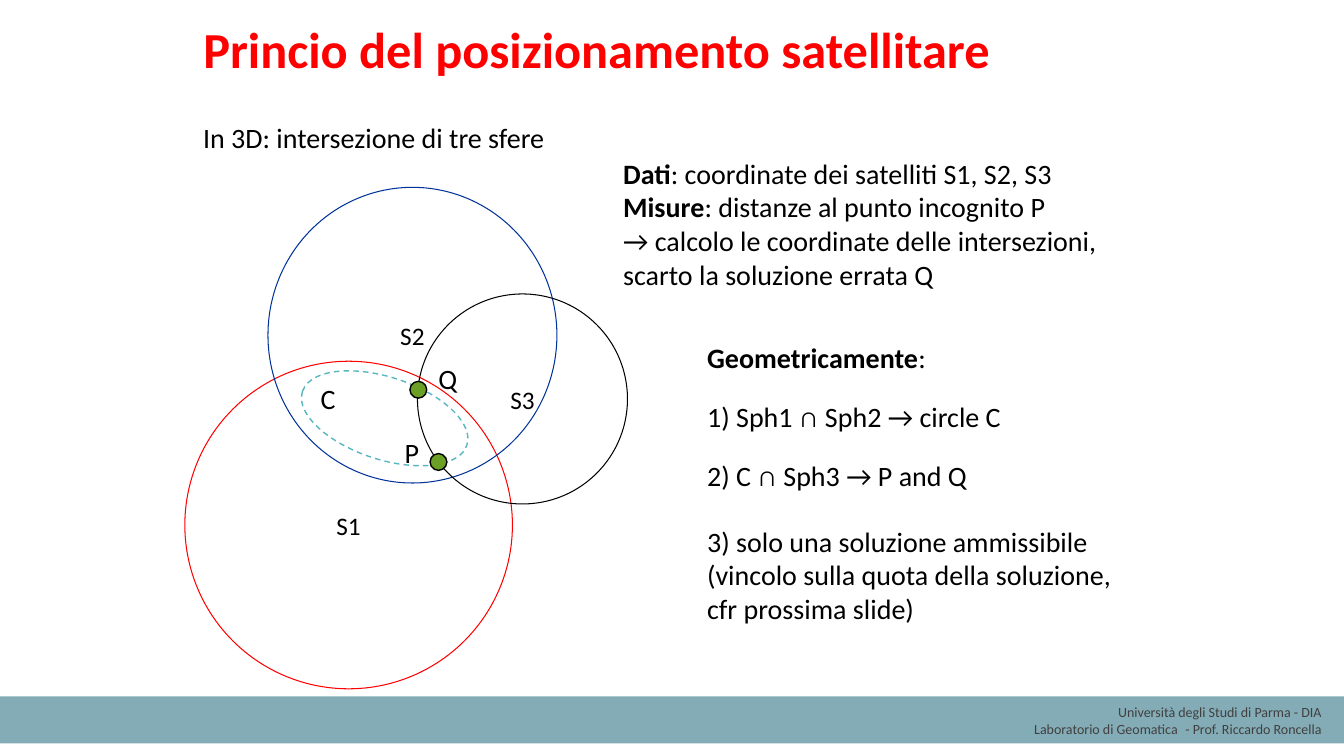
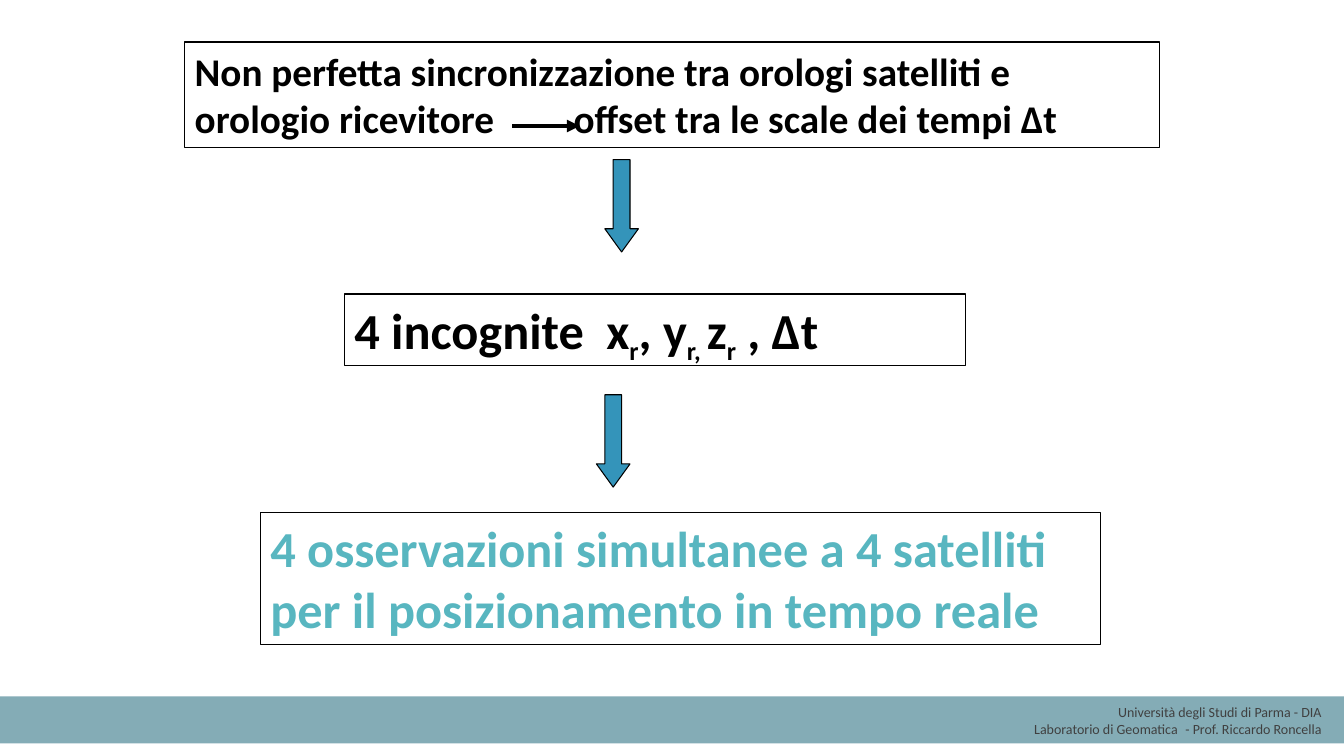
from dataclasses import dataclass
from typing import NamedTuple, Optional

from lxml.etree import SubElement
from pptx import Presentation
from pptx.dml.color import RGBColor
from pptx.enum.dml import MSO_LINE
from pptx.enum.shapes import MSO_CONNECTOR, MSO_SHAPE
from pptx.enum.text import MSO_ANCHOR, MSO_AUTO_SIZE, PP_ALIGN
from pptx.oxml.ns import qn
from pptx.util import Inches, Pt

COLUMNS, ROWS = 160, 90
SLIDE_WIDTH, SLIDE_HEIGHT = Inches(13.333), Inches(7.5)
TITLE_ONLY, BLANK = 5, 6
FONT = "Calibri"
COLORS = {
    "text": "000000",
    "title": "FF0000",
    "band": "84ACB6",
    "footer": "404040",
    "sphere1": "FF0000",
    "sphere2": "003399",
    "sphere3": "000000",
    "accent": "58B6C0",
    "solution": "6B9F25",
    "arrow": "3494BA",
}


class Area(NamedTuple):
    """Left, top, width and height in grid columns and rows."""
    left: float
    top: float
    width: float
    height: float


class Run(NamedTuple):
    text: str
    bold: bool = False
    subscript: bool = False


@dataclass
class Style:
    size: float = 20
    color: str = "text"
    align: PP_ALIGN = PP_ALIGN.LEFT
    anchor: MSO_ANCHOR = MSO_ANCHOR.TOP
    wrap: bool = True
    tab_stop: Optional[float] = None


@dataclass
class Outline:
    area: Area
    kind: MSO_SHAPE = MSO_SHAPE.OVAL
    fill: Optional[str] = None
    line: Optional[str] = "text"
    weight: float = 0.75
    dash: Optional[MSO_LINE] = None
    rotation: float = 0


@dataclass
class TextBlock:
    area: Area
    paragraphs: list[list[Run]]
    style: Style


@dataclass
class Sphere:
    label: str
    area: Area
    color: str


@dataclass
class Step:
    area: Area
    runs: list[Run]
    style: Style


BODY = Style()
LABEL = Style(wrap=False)
SPHERE_LABEL = Style(18, align=PP_ALIGN.CENTER, anchor=MSO_ANCHOR.MIDDLE, wrap=False)
TITLE = Style(36, "title", anchor=MSO_ANCHOR.MIDDLE)
FOOTER = Style(10, "footer", PP_ALIGN.RIGHT)

BAND = Outline(Area(0, 82.9, COLUMNS, 5.6), MSO_SHAPE.RECTANGLE, "band", None)
FOOTER_TEXT = TextBlock(
    Area(108.7, 83.2, 49.8, 5.3),
    [[Run("Università degli Studi di Parma - DIA")],
     [Run("Laboratorio di Geomatica\t- Prof. Riccardo Roncella")]],
    FOOTER,
)

SPHERES = [
    Sphere("S1", Area(22, 43, 39, 39), "sphere1"),
    Sphere("S2", Area(31.9, 22.3, 34.4, 35.2), "sphere2"),
    Sphere("S3", Area(49.7, 35, 25, 25), "sphere3"),
]
CIRCLE_C = Outline(Area(35.5, 44.9, 20.6, 9.8), line="accent", weight=1,
                   dash=MSO_LINE.DASH, rotation=18.1)
SOLUTIONS = [
    Outline(Area(left, top, 2, 2), fill="solution", weight=1)
    for left, top in [(48.8, 45.4), (51.2, 54)]
]
POINT_LABELS = [
    TextBlock(Area(left, top, width, 5.2), [[Run(name)]], LABEL)
    for name, left, top, width in [
        ("C", 37, 44.8, 4.2), ("Q", 51, 42.4, 4.7), ("P", 47, 51.2, 4.1)]
]
EXPLANATIONS = [
    TextBlock(Area(23, 13.8, 108, 5.2), [[Run("In 3D: intersezione di tre sfere")]], BODY),
    TextBlock(
        Area(73, 18, 67, 17.4),
        [[Run("Dati", bold=True), Run(": coordinate dei satelliti S1, S2, S3")],
         [Run("Misure", bold=True), Run(": distanze al punto incognito P")],
         [Run("→ calcolo le coordinate delle intersezioni, scarto la soluzione errata Q")]],
        BODY,
    ),
]
GEOMETRY = [
    (40, [Run("Geometricamente", bold=True), Run(":")]),
    (47, [Run("1) Sph1 ∩ Sph2 → circle C")]),
    (54, [Run("2) C ∩ Sph3 → P and Q")]),
    (61.8, [Run("3) solo una soluzione ammissibile (vincolo sulla quota "
                "della soluzione, cfr prossima slide)")]),
]

STEPS = [
    Step(Area(22, 5, 116, 12.6),
         [Run("Non perfetta sincronizzazione tra orologi satelliti e orologio "
              "ricevitore\toffset tra le scale dei tempi Δt", bold=True)],
         Style(28, tab_stop=45.1)),
    Step(Area(41, 35, 74, 8.5),
         [Run("4 incognite\tx", True), Run("r", True, True), Run(", y", True),
          Run("r, ", True, True), Run("z", True), Run("r", True, True),
          Run(" , Δt", True)],
         Style(36)),
    Step(Area(31, 61, 100, 15.7),
         [Run("4 osservazioni simultanee a 4 satelliti per il posizionamento "
              "in tempo reale", bold=True)],
         Style(36, "accent")),
]
DOWN_ARROWS = [
    Outline(Area(left, top, 4, 11), MSO_SHAPE.DOWN_ARROW, "arrow")
    for left, top in [(72, 19), (71, 47)]
]


def across(columns: float) -> int:
    return round(SLIDE_WIDTH * columns / COLUMNS)


def down(rows: float) -> int:
    return round(SLIDE_HEIGHT * rows / ROWS)


def rgb(name: str) -> RGBColor:
    return RGBColor.from_string(COLORS[name])


def assign(target, values: dict) -> None:
    for attribute, value in values.items():
        setattr(target, attribute, value)


def place(area: Area) -> tuple[int, int, int, int]:
    return across(area.left), down(area.top), across(area.width), down(area.height)


def write(frame, paragraphs: list[list[Run]], style: Style) -> None:
    assign(frame, {"word_wrap": style.wrap, "auto_size": MSO_AUTO_SIZE.NONE,
                   "vertical_anchor": style.anchor})
    for index, runs in enumerate(paragraphs):
        paragraph = frame.add_paragraph() if index else frame.paragraphs[0]
        paragraph.alignment = style.align
        if style.tab_stop is not None:
            stops = SubElement(paragraph._p.get_or_add_pPr(), qn("a:tabLst"))
            SubElement(stops, qn("a:tab"), pos=str(across(style.tab_stop)), algn="l")
        for part in runs:
            run = paragraph.add_run()
            run.text = part.text
            size = style.size - 4 if part.subscript else style.size
            assign(run.font, {"name": FONT, "size": Pt(size), "bold": part.bold})
            run.font.color.rgb = rgb(style.color)
            if part.subscript:
                run.font._element.set("baseline", "-25000")


def draw_text(slide, block: TextBlock) -> None:
    box = slide.shapes.add_textbox(*place(block.area))
    write(box.text_frame, block.paragraphs, block.style)


def draw_outline(slide, outline: Outline):
    shape = slide.shapes.add_shape(outline.kind, *place(outline.area))
    shape.shadow.inherit = False
    shape.rotation = outline.rotation
    if outline.fill:
        shape.fill.solid()
        shape.fill.fore_color.rgb = rgb(outline.fill)
    else:
        shape.fill.background()
    if outline.line:
        shape.line.color.rgb = rgb(outline.line)
        assign(shape.line, {"width": Pt(outline.weight), "dash_style": outline.dash})
    else:
        shape.line.fill.background()
    return shape


def draw_implication(slide, left: float, right: float, row: float) -> None:
    """Draw the thick horizontal arrow from cause to effect."""
    arrow = slide.shapes.add_connector(
        MSO_CONNECTOR.STRAIGHT, across(left), down(row), across(right), down(row))
    arrow.line.color.rgb = rgb("text")
    arrow.line.width = Pt(3)
    properties = arrow._element.spPr
    SubElement(properties.find(qn("a:ln")), qn("a:tailEnd"), type="triangle")
    SubElement(properties, qn("a:effectLst"))


def add_slide(deck, layout: int, title: str = ""):
    """Add a slide with the footer band and, if given, a title."""
    slide = deck.slides.add_slide(deck.slide_layouts[layout])
    draw_outline(slide, BAND)
    draw_text(slide, FOOTER_TEXT)
    if title:
        heading = slide.shapes.title
        left, top, width, height = place(Area(23, 0, 115, 11.5))
        assign(heading, {"left": left, "top": top, "width": width, "height": height})
        write(heading.text_frame, [[Run(title, bold=True)]], TITLE)
    return slide


def build_positioning(deck) -> None:
    slide = add_slide(deck, TITLE_ONLY, "Princio del posizionamento satellitare")
    draw_outline(slide, CIRCLE_C)
    for sphere in SPHERES:
        circle = draw_outline(slide, Outline(sphere.area, line=sphere.color))
        write(circle.text_frame, [[Run(sphere.label)]], SPHERE_LABEL)
    for solution in SOLUTIONS:
        draw_outline(slide, solution)
    geometry = [TextBlock(Area(83, top, 53.6, 5.2), [runs], BODY) for top, runs in GEOMETRY]
    for block in EXPLANATIONS + geometry + POINT_LABELS:
        draw_text(slide, block)


def build_unknowns(deck) -> None:
    slide = add_slide(deck, BLANK)
    for step in STEPS:
        box = draw_outline(slide, Outline(step.area, MSO_SHAPE.RECTANGLE))
        write(box.text_frame, [step.runs], step.style)
    draw_implication(slide, 61, 69, 15)
    for outline in DOWN_ARROWS:
        arrow = draw_outline(slide, outline)
        arrow.adjustments[0] = 0.5
        arrow.adjustments[1] = 0.69


def main() -> None:
    deck = Presentation()
    assign(deck, {"slide_width": SLIDE_WIDTH, "slide_height": SLIDE_HEIGHT})
    build_positioning(deck)
    build_unknowns(deck)
    deck.save("out.pptx")


if __name__ == "__main__":
    main()
